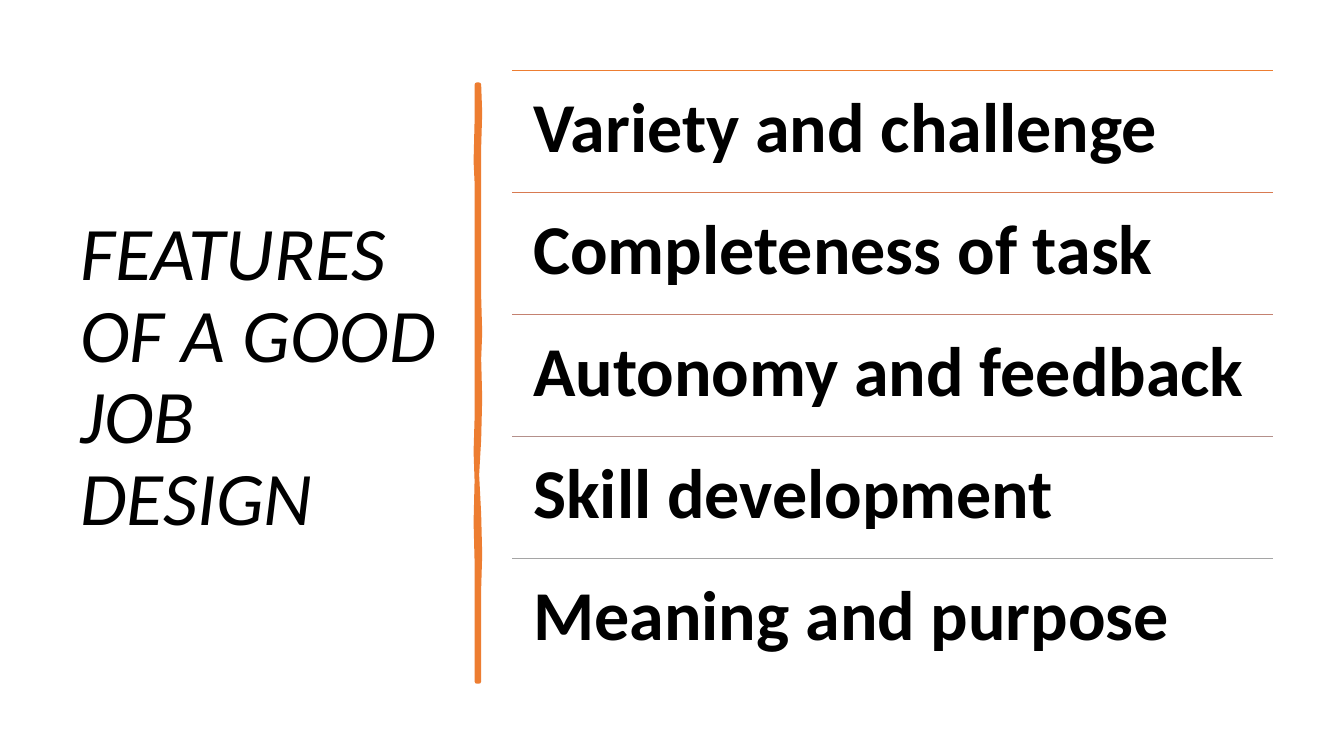
from lxml import etree
from pptx import Presentation
from pptx.dml.color import RGBColor
from pptx.enum.shapes import MSO_CONNECTOR as Connector
from pptx.enum.text import MSO_ANCHOR as Anchor
from pptx.oxml.ns import qn
from pptx.util import Inches, Pt

ORANGE = "ED7D31"
BLACK = "000000"
TITLE = "FEATURES OF A GOOD JOB DESIGN"
FEATURES = [
    ("Variety and challenge", ORANGE),
    ("Completeness of task", "D87A51"),
    ("Autonomy and feedback", "C48170"),
    ("Skill development", "B4908B"),
    ("Meaning and purpose", "A5A5A5"),
]
LIST_LEFT, LIST_TOP, LIST_WIDTH, ROW_HEIGHT = 5.08, 0.7, 7.55, 1.21

# Hand-drawn divider, down the right edge and back up the left
DIVIDER_OUTLINE = [
    (4.75, 0.84), (4.76, 1.12), (4.75, 1.46), (4.75, 1.85), (4.75, 2.94),
    (4.76, 3.3), (4.75, 3.56), (4.76, 3.95), (4.75, 4.36), (4.73, 4.71),
    (4.75, 5.1), (4.76, 5.5), (4.75, 5.84), (4.75, 6.76),
    (4.73, 6.76), (4.73, 6.13), (4.73, 5.57), (4.72, 5.18), (4.73, 4.77),
    (4.72, 4.48), (4.73, 4.15), (4.73, 3.35), (4.73, 2.5), (4.73, 1.81),
    (4.72, 1.6), (4.73, 1.2), (4.73, 0.84),
]


def color(hex_value):
    return RGBColor.from_string(hex_value)


def set_all(target, values):
    for name, value in values.items():
        setattr(target, name, value)


def add_text(slide, box, text, font, anchor=Anchor.TOP, inset=None):
    frame = slide.shapes.add_textbox(*map(Inches, box)).text_frame
    set_all(frame, {"word_wrap": True, "vertical_anchor": anchor})
    if inset is not None:
        sides = ("left", "top", "right", "bottom")
        set_all(frame, {f"margin_{side}": Inches(inset) for side in sides})
    paragraph = frame.paragraphs[0]
    paragraph.line_spacing = 0.9
    run = paragraph.add_run()
    run.text = text
    set_all(run.font, {"name": "Calibri", **font})
    run.font.color.rgb = color(BLACK)


def add_rule(slide, left, top, width, hex_value):
    ends = map(Inches, (left, top, left + width, top))
    rule = slide.shapes.add_connector(Connector.STRAIGHT, *ends)
    rule.line.color.rgb = color(hex_value)
    rule.line.width = Pt(1)
    etree.SubElement(rule._element.spPr, qn("a:effectLst"))


def add_divider(slide):
    start, *others = [tuple(map(Inches, point)) for point in DIVIDER_OUTLINE]
    outline = slide.shapes.build_freeform(*start)
    outline.add_line_segments(others, close=True)
    divider = outline.convert_to_shape()
    divider.shadow.inherit = False
    divider.fill.solid()
    divider.fill.fore_color.rgb = color(ORANGE)
    divider.line.color.rgb = color(ORANGE)
    divider.line.width = Pt(3.25)


def main():
    deck = Presentation()
    set_all(deck, {"slide_width": Inches(13.33), "slide_height": Inches(7.5)})
    slide = deck.slides.add_slide(deck.slide_layouts[6])

    # Title and divider
    add_text(slide, (0.7, 0.7, 3.74, 6.11), TITLE,
             {"size": Pt(54), "italic": True}, anchor=Anchor.MIDDLE)
    add_divider(slide)

    # Feature list, each row under its own rule
    for row, (feature, rule_color) in enumerate(FEATURES):
        top = LIST_TOP + row * ROW_HEIGHT
        add_rule(slide, LIST_LEFT, top, LIST_WIDTH, rule_color)
        add_text(slide, (LIST_LEFT, top, LIST_WIDTH, ROW_HEIGHT), feature,
                 {"size": Pt(50), "bold": True}, inset=0.21)

    deck.save("out.pptx")


if __name__ == "__main__":
    main()
